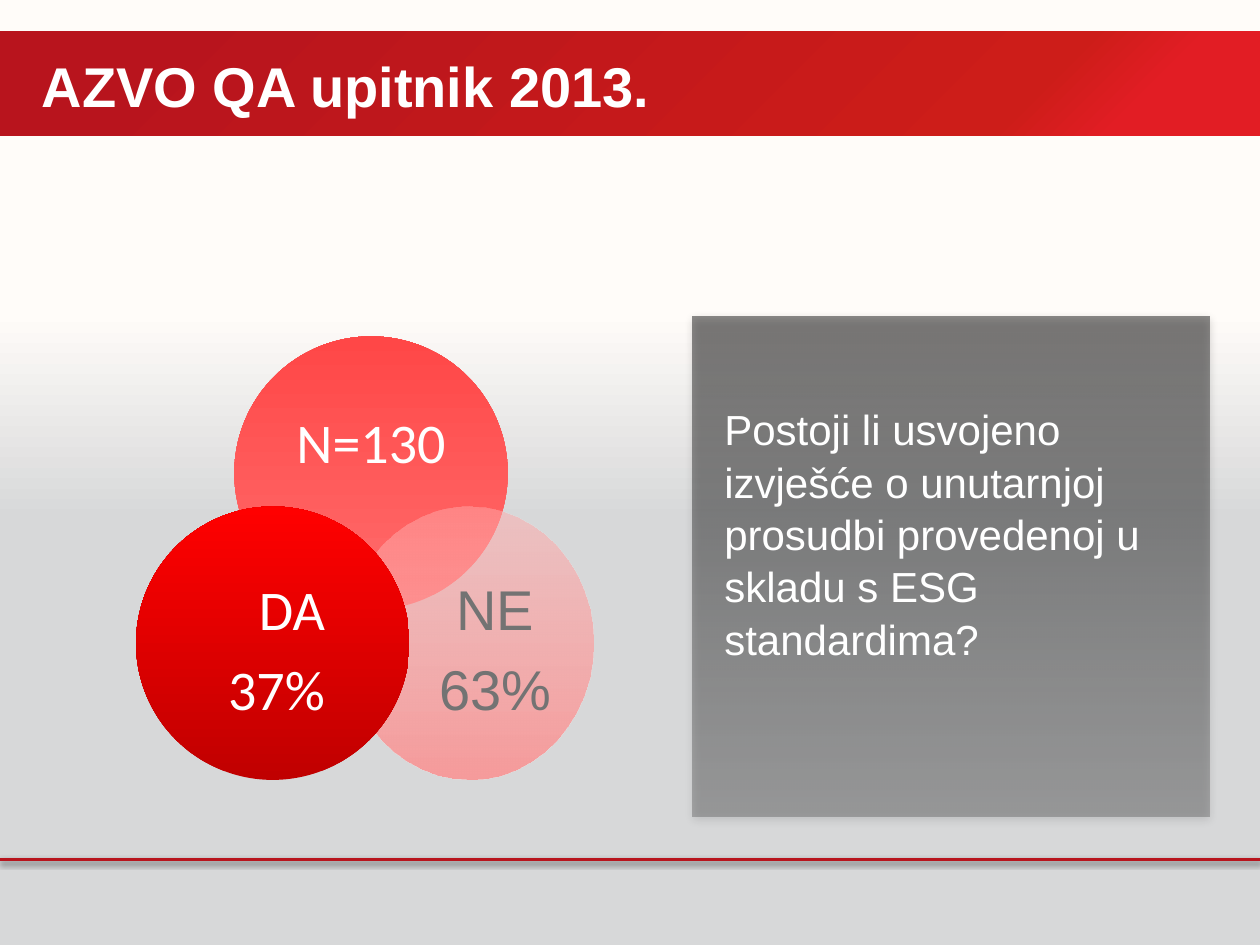
"""Build the AZVO QA survey slide with three overlapping circles and a question panel."""
import pptx
import pptx.dml.color
import pptx.enum.shapes
import pptx.enum.text
import pptx.oxml.ns
import pptx.util
from lxml import etree

qn = pptx.oxml.ns.qn
Pt = pptx.util.Pt
Shape = pptx.enum.shapes.MSO_SHAPE
Align = pptx.enum.text.PP_ALIGN
Anchor = pptx.enum.text.MSO_ANCHOR


def paint(fill, *stops, angle=270):
    if len(stops) == 1:
        fill.solid()
        fill.fore_color.rgb = pptx.dml.color.RGBColor.from_string(stops[0])
        return
    fill.gradient()
    fill.gradient_angle = 360 - angle
    ramp = next(fill._xPr.iter(qn("a:gsLst")))
    for old in list(ramp):
        ramp.remove(old)
    for pos, tint, alpha in stops:
        stop = etree.SubElement(ramp, qn("a:gs"), pos=str(pos * 1000))
        color = etree.SubElement(stop, qn("a:srgbClr"), val=tint)
        if alpha < 100:
            etree.SubElement(color, qn("a:alpha"), val=str(alpha * 1000))


def write(frame, text, size=32, font="Arial", color="FFFFFF", bold=False,
          align=Align.LEFT, anchor=Anchor.TOP, inset=None, lead=1.0, after=0):
    frame.word_wrap = True
    frame.vertical_anchor = anchor
    if inset is not None:
        frame.margin_left = frame.margin_right = inset
        frame.margin_top = frame.margin_bottom = inset
    frame.text = text
    for para in frame.paragraphs:
        para.alignment = align
        para.line_spacing = lead
        if after:
            gap = etree.SubElement(para._p.get_or_add_pPr(), qn("a:spcAft"))
            etree.SubElement(gap, qn("a:spcPct"), val=str(after * 1000))
        run = para.runs[0]
        run.font.size, run.font.name, run.font.bold = Pt(size), font, bold
        paint(run.font.fill, color)


deck = pptx.Presentation()
deck.slide_width = pptx.util.Inches(10)
deck.slide_height = pptx.util.Inches(7.5)
unit = deck.slide_width // 100
slide = deck.slides.add_slide(deck.slide_layouts[5])
shapes = slide.shapes
paint(slide.background.fill, (45, "D7D8D9", 49), (67, "FFFCF9", 100), (81, "FFFCF9", 100))

band = shapes.add_shape(Shape.RECTANGLE, 0, int(2.5 * unit), 100 * unit, int(8.3 * unit))
band.shadow.inherit = False
band.line.fill.background()
paint(band.fill, (11, "E21D24", 100), (20, "CD1D19", 100), (89, "B8141D", 100), angle=225)

foot = int(68.2 * unit)
rule = shapes.add_connector(pptx.enum.shapes.MSO_CONNECTOR.STRAIGHT, 0, foot, 100 * unit, foot)
paint(rule.line.fill, "B8141D")
rule.line.width = Pt(2)

panel = shapes.add_shape(Shape.RECTANGLE, *[int(n * unit) for n in (55, 25.1, 41, 39.7)])
panel.line.fill.background()
paint(panel.fill, (0, "171717", 49), (100, "3A3A3A", 31), angle=90)

for item, alpha, blur, dist in ((rule, 38, 3.1, 1.6), (panel, 35, 5, 1.8)):
    glow = etree.SubElement(item._element.spPr, qn("a:effectLst"))
    cast = etree.SubElement(glow, qn("a:outerShdw"), blurRad=str(Pt(blur)), dist=str(Pt(dist)),
                            dir="5400000", rotWithShape="0")
    tone = etree.SubElement(cast, qn("a:srgbClr"), val="000000")
    etree.SubElement(tone, qn("a:alpha"), val=str(alpha * 1000))

query = shapes.add_textbox(*[int(n * unit) for n in (56.5, 31.4, 36.5, 21)])
write(query.text_frame,
      "Postoji li usvojeno izvješće o unutarnjoj prosudbi provedenoj u skladu s ESG standardima?",
      size=24, lead=1.04)

title = shapes.title
title.left, title.top, title.width, title.height = [
    int(n * unit) for n in (2.3, 3.6, 74.3, 6.2)]
write(title.text_frame, "AZVO QA upitnik 2013.", bold=True)
shapes._spTree.append(title._element)

circles = (
    ((18.6, 26.7, 21.7, 21.7), ((0, "FF6D6D", 100), (100, "FF4747", 100)),
     (21.5, 30.5, 15.9, 9.7), "N=130", "Calibri", "FFFFFF", Align.CENTER),
    ((27.4, 40.2, 19.7, 21.7), ((0, "FB9393", 88), (100, "FFABAB", 50)),
     (33.4, 45.8, 11.8, 11.9), "NE\n63%", "Arial", "737373", Align.CENTER),
    ((10.8, 40.2, 21.7, 21.7), ((0, "C00000", 100), (100, "FF0000", 100)),
     (12.8, 45.8, 13, 11.9), "DA\n37%", "Calibri", "FFFFFF", Align.RIGHT),
)
venn = shapes.add_group_shape()
for place, stops, room, text, font, color, align in circles:
    disc = venn.shapes.add_shape(Shape.OVAL, *[int(n * unit) for n in place])
    disc.shadow.inherit = False
    disc.line.fill.background()
    paint(disc.fill, *stops)
    label = venn.shapes.add_textbox(*[int(n * unit) for n in room])
    write(label.text_frame, text, font=font, color=color, align=align,
          anchor=Anchor.MIDDLE, inset=0, lead=0.9, after=35)

deck.save("out.pptx")
